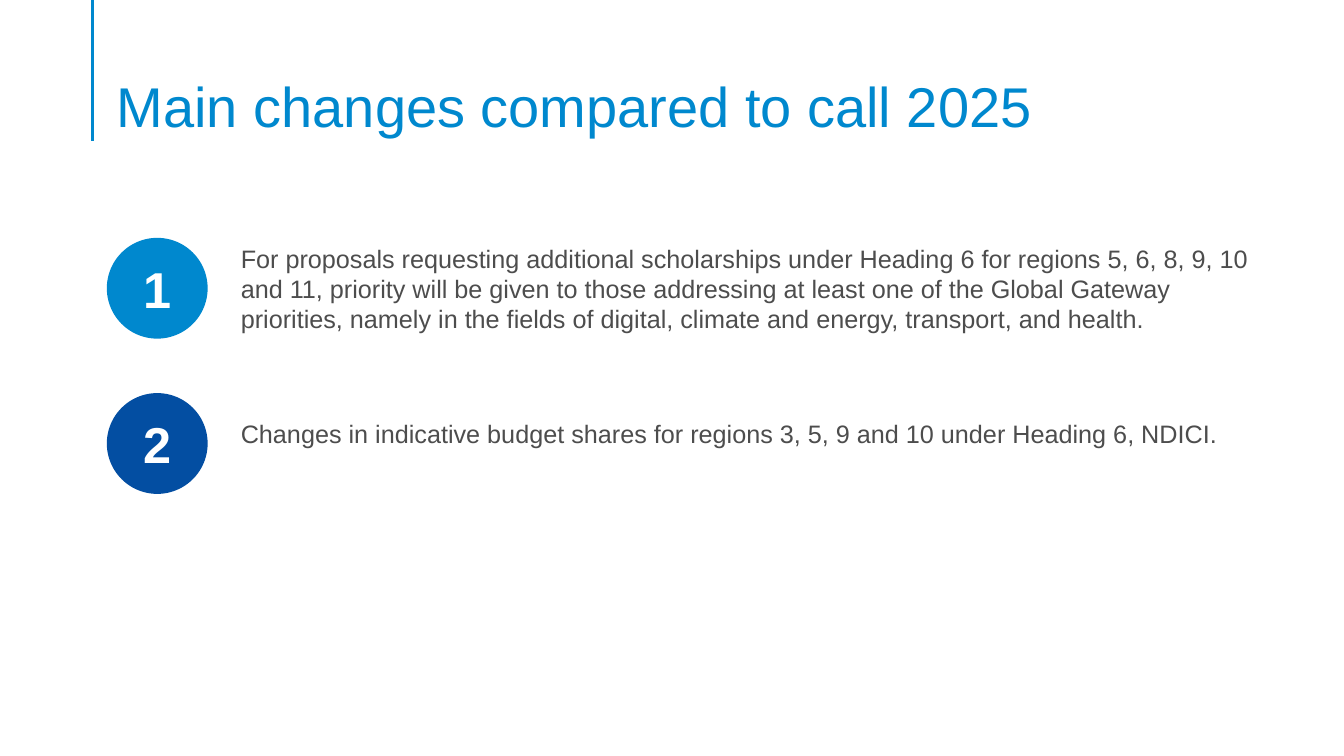
"""Builds the slide on the main changes compared to call 2025."""
from dataclasses import dataclass

from lxml import etree
from pptx import Presentation
from pptx.dml.color import RGBColor
from pptx.enum.shapes import MSO_CONNECTOR, MSO_SHAPE
from pptx.enum.text import MSO_ANCHOR, PP_ALIGN
from pptx.oxml.ns import qn
from pptx.util import Inches, Pt

LINE = MSO_CONNECTOR.STRAIGHT
OVAL = MSO_SHAPE.OVAL
TOP, MIDDLE, BOTTOM = MSO_ANCHOR.TOP, MSO_ANCHOR.MIDDLE, MSO_ANCHOR.BOTTOM
LEFT, CENTER = PP_ALIGN.LEFT, PP_ALIGN.CENTER


@dataclass(frozen=True)
class Theme:
    font: str = "Arial"
    sky: RGBColor = RGBColor(0x00, 0x88, 0xCE)
    navy: RGBColor = RGBColor(0x03, 0x4E, 0xA2)
    gray: RGBColor = RGBColor(0x4D, 0x4D, 0x4D)
    white: RGBColor = RGBColor(0xFF, 0xFF, 0xFF)
    title: Pt = Pt(40)
    number: Pt = Pt(36)
    body: Pt = Pt(18)
    rule: Pt = Pt(2.25)


theme = Theme()


def write(shape, text, size, color, anchor=TOP, align=LEFT, bold=False):
    """Put one styled paragraph in a shape and return it."""
    frame = shape.text_frame
    frame.word_wrap = True
    frame.vertical_anchor = anchor
    para = frame.paragraphs[0]
    para.text = text
    para.alignment = align
    para.font.name = theme.font
    para.font.size = size
    para.font.bold = bold
    para.font.color.rgb = color
    return para


deck = Presentation()
deck.slide_width = Inches(13.33)
deck.slide_height = Inches(7.5)
slide = deck.slides.add_slide(deck.slide_layouts[6])
shapes = slide.shapes

rule = shapes.add_connector(LINE, Inches(0.92), 0, Inches(0.92), Inches(1.4))
rule.line.color.rgb = theme.sky
rule.line.width = theme.rule
etree.SubElement(rule._element.spPr, qn("a:effectLst"))

title = shapes.add_textbox(Inches(1.06), Inches(0.53), Inches(11.5), Inches(0.86))
title.text_frame.margin_bottom = 0
head = write(title, "Main changes compared to call 2025", theme.title, theme.sky, BOTTOM)
head.line_spacing = 0.9

changes = [
    (theme.sky, 2.36, 1.01,
     "For proposals requesting additional scholarships under Heading 6 for regions "
     "5, 6, 8, 9, 10 and 11, priority will be given to those addressing at least one "
     "of the Global Gateway priorities, namely in the fields of digital, climate and "
     "energy, transport, and health."),
    (theme.navy, 4.1, 0.4,
     "Changes in indicative budget shares for regions 3, 5, 9 and 10 under Heading 6, "
     "NDICI."),
]
for row, (color, top, height, text) in enumerate(changes):
    disc = shapes.add_shape(
        OVAL, Inches(1.06), Inches(2.36 + 1.54 * row), Inches(1), Inches(1))
    disc.shadow.inherit = False
    disc.fill.solid()
    disc.fill.fore_color.rgb = color
    disc.line.fill.background()
    write(disc, str(row + 1), theme.number, theme.white, MIDDLE, CENTER, True)
    note = shapes.add_textbox(Inches(2.29), Inches(top), Inches(10.36), Inches(height))
    write(note, text, theme.body, theme.gray)

deck.save("out.pptx")
